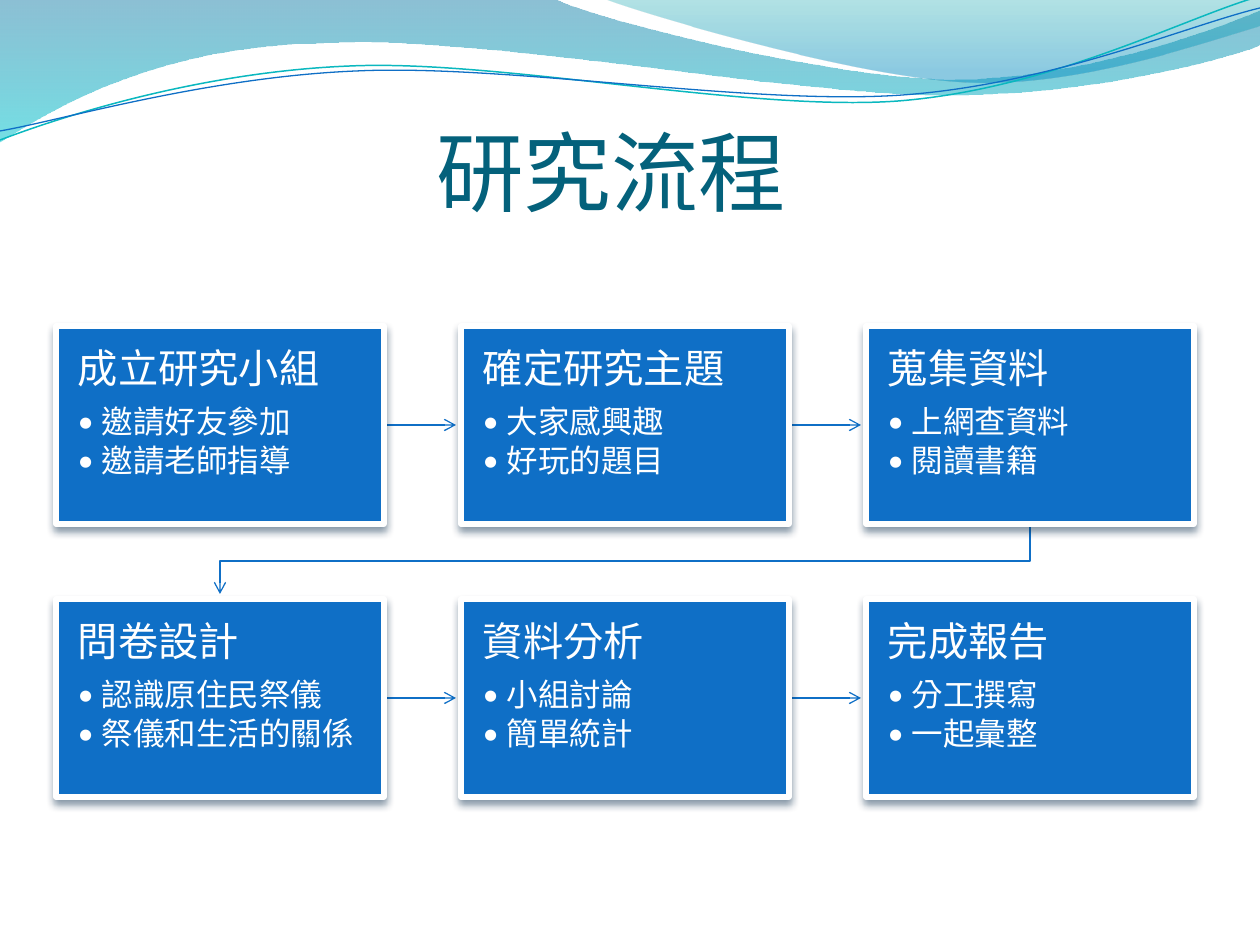
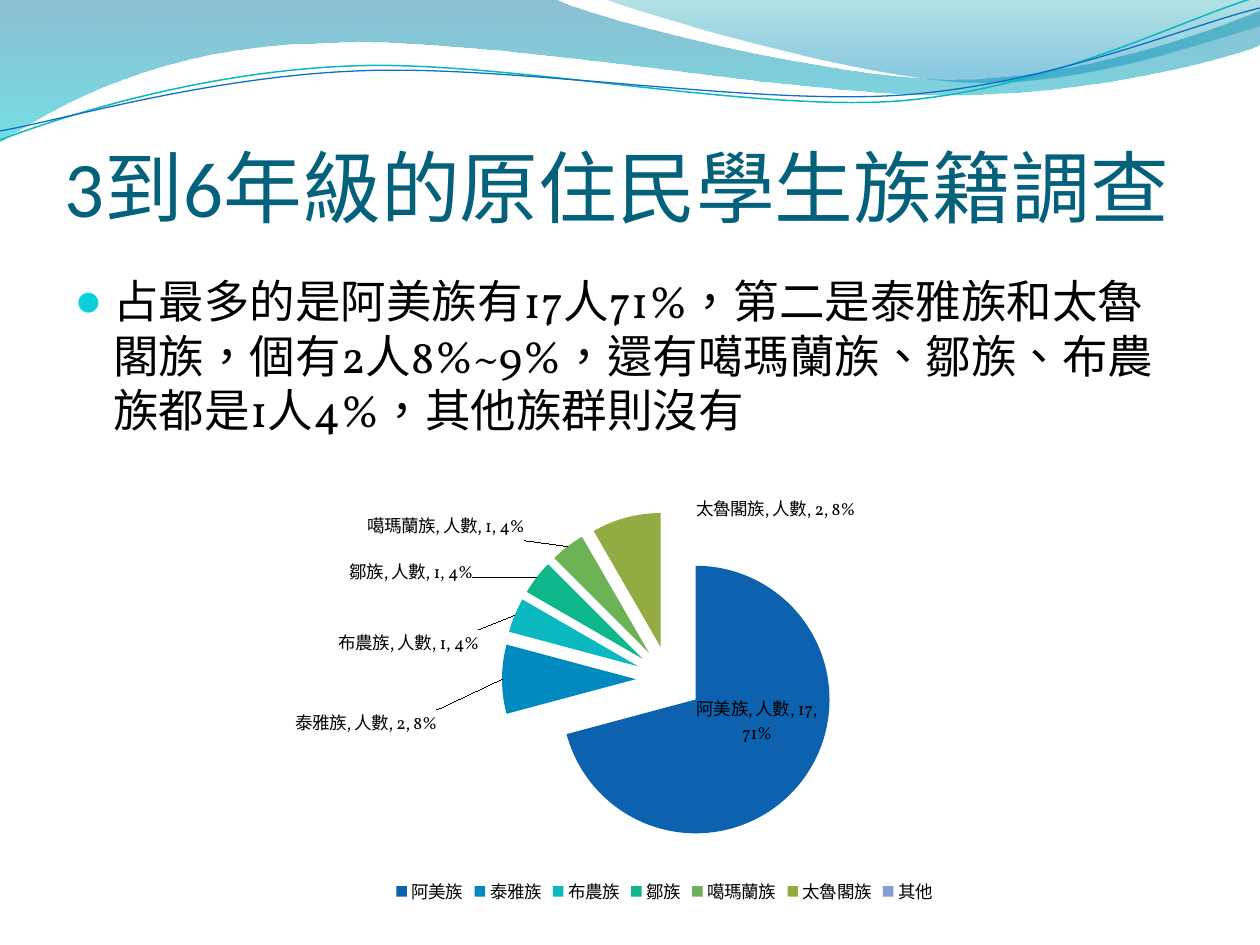
from dataclasses import dataclass

import pptx
import pptx.chart.data
import pptx.dml.color
import pptx.enum.chart
import pptx.enum.lang
import pptx.enum.shapes
import pptx.enum.text
import pptx.oxml
import pptx.oxml.ns
import pptx.util

PX = 914400 / 126  # EMU in one px


@dataclass(frozen=True)
class Theme:
    title: str = "04617B"
    blue: str = "0F6FC6"
    teal: str = "0AB8BF"
    bullet: str = "0BD0D9"
    shadow: str = "042747"
    white: str = "FFFFFF"
    black: str = "000000"
    slices: tuple = ("0C62AF", "008AC0", "0AB8C1", "0EB789",
                     "6DB356", "92AC41", "859FD5")
    title_font: str = "Calibri"
    body_font: str = "Vollkorn"
    box_heading: int = 23
    box_item: int = 18
    body: int = 26
    chart: int = 10


theme = Theme()
rgb = pptx.dml.color.RGBColor.from_string


def append_xml(parent, *fragments):
    """Append elements such as '<a:effectLst/>' to a parent element."""
    namespaces = pptx.oxml.ns.nsdecls("a", "c")
    for fragment in fragments:
        wrapper = pptx.oxml.parse_xml(f"<a:wrapper {namespaces}>{fragment}</a:wrapper>")
        parent.append(wrapper[0])


def add_paragraph(frame, text, size, color, font=theme.body_font):
    paragraph = frame.add_paragraph() if frame.text else frame.paragraphs[0]
    run = paragraph.add_run()
    run.text = text
    run.font.size = pptx.util.Pt(size)
    run.font.name = font
    run.font.color.rgb = rgb(color)
    run.font.language_id = pptx.enum.lang.MSO_LANGUAGE_ID.TRADITIONAL_CHINESE
    return paragraph


presentation = pptx.Presentation()
presentation.slide_width = round(1260 * PX)
presentation.slide_height = round(945 * PX)

# Wave header: two numbers are a line to a point, six are a cubic curve
bands = [
    ([(0, 0), (554, -1), (600, 21, 837, 79, 955, 79), (1075, 79, 1207, 33, 1260, 11),
      (1261, 45), (1239, 55, 1096, 96, 940, 95), (784, 94, 481, 35, 324, 43),
      (163, 45, 58, 105, -1, 142)],
     [(0, "0074A1", 45), (1, "00C6CF", 55)]),
    ([(604, -1), (641, 14, 859, 78, 969, 82), (1079, 87, 1211, 40, 1260, 26), (1260, 0)],
     [(0, "00A1A9", 30), (0.8, "008BBF", 45)]),
]
strands = [
    ([(0, 140), (60, 117, 199, 72, 349, 66), (498, 59, 747, 112, 898, 101),
      (1050, 89, 1182, 19, 1257, -3)], theme.teal, 0.85),
    ([(0, 131), (59, 121, 207, 77, 357, 71), (508, 64, 752, 106, 903, 95),
      (1053, 84, 1186, 26, 1260, 8)], theme.blue, 0.75),
]
waves = [(outline, stops, None, None) for outline, stops in bands]
waves += [(outline, None, color, width) for outline, color, width in strands]

titles = [
    ("研究流程 ", 50, 54, 66, pptx.enum.text.PP_ALIGN.CENTER),
    ("3到6年級的原住民學生族籍調查", 45, 65, 76, pptx.enum.text.PP_ALIGN.LEFT),
]

# Header and title of both slides
slides = []
for title, size, left, top, alignment in titles:
    slide = presentation.slides.add_slide(presentation.slide_layouts[6])
    slides.append(slide)

    for outline, stops, color, width in waves:
        points = [(round(x * PX), round(y * PX)) for segment in outline
                  for x, y in zip(segment[::2], segment[1::2])]
        builder = slide.shapes.build_freeform(*points[0])
        builder.add_line_segments(points[1:], close=stops is not None)
        wave = builder.convert_to_shape()

        # Merge the three points of each curve into one cubic segment
        outline_element = wave.element.xpath(".//a:pathLst/a:path")[0]
        lines = iter(outline_element.xpath("./a:lnTo"))
        for segment in outline[1:]:
            group = [next(lines) for _ in segment[::2]]
            if len(group) == 3:
                append_xml(outline_element, "<a:cubicBezTo/>")
                curve = outline_element[-1]
                group[0].addprevious(curve)
                for line in group:
                    curve.append(line[0])
                    outline_element.remove(line)

        wave.shadow.inherit = False
        if stops:
            wave.line.fill.background()
            wave.fill.gradient()
            wave.fill.gradient_angle = 270
            for stop, (position, stop_color, _) in zip(wave.fill.gradient_stops, stops):
                stop.position = position
                stop.color.rgb = rgb(stop_color)
            color_elements = wave.element.xpath("./p:spPr/a:gradFill//a:srgbClr")
            for element, (_, _, opacity) in zip(color_elements, stops):
                append_xml(element, f'<a:alpha val="{opacity * 1000}"/>')
        else:
            wave.fill.background()
            wave.line.color.rgb = rgb(color)
            wave.line.width = pptx.util.Pt(width)

    title_box = slide.shapes.add_textbox(
        round(left * PX), round(top * PX), round(1134 * PX), round(157 * PX))
    frame = title_box.text_frame
    frame.word_wrap = True
    frame.vertical_anchor = pptx.enum.text.MSO_ANCHOR.BOTTOM
    frame.margin_left = frame.margin_right = frame.margin_bottom = 0
    frame.margin_top = round(6 * PX)
    add_paragraph(frame, title, size, theme.title, theme.title_font).alignment = alignment

flow_slide, survey_slide = slides

# Process boxes, three to a row
steps = [
    ("成立研究小組", "邀請好友參加", "邀請老師指導"),
    ("確定研究主題", "大家感興趣", "好玩的題目"),
    ("蒐集資料", "上網查資料", "閱讀書籍"),
    ("問卷設計", "認識原住民祭儀", "祭儀和生活的關係"),
    ("資料分析", "小組討論", "簡單統計"),
    ("完成報告", "分工撰寫", "一起彙整"),
]
BOX_LEFT, BOX_TOP, BOX_WIDTH, BOX_HEIGHT = 56, 326, 328, 198
COLUMN_PITCH, ROW_PITCH = 405, 273
ARROW_GAP = 5
boxes = []
for index, (heading, *items) in enumerate(steps):
    row, column = divmod(index, 3)
    box = flow_slide.shapes.add_shape(
        pptx.enum.shapes.MSO_SHAPE.RECTANGLE,
        round((BOX_LEFT + column * COLUMN_PITCH) * PX),
        round((BOX_TOP + row * ROW_PITCH) * PX),
        round(BOX_WIDTH * PX), round(BOX_HEIGHT * PX))
    boxes.append(box)
    box.fill.solid()
    box.fill.fore_color.rgb = rgb(theme.blue)
    box.line.color.rgb = rgb(theme.white)
    box.line.width = pptx.util.Pt(3)
    box.shadow.inherit = False
    append_xml(
        box.element.xpath("./p:spPr/a:effectLst")[0],
        '<a:outerShdw blurRad="57150" dist="38100" dir="5400000" rotWithShape="0">'
        f'<a:srgbClr val="{theme.shadow}"><a:alpha val="48000"/></a:srgbClr></a:outerShdw>')

    frame = box.text_frame
    frame.word_wrap = True
    frame.vertical_anchor = pptx.enum.text.MSO_ANCHOR.TOP
    frame.margin_left = frame.margin_right = round(22 * PX)
    frame.margin_top = frame.margin_bottom = round(23 * PX)
    for text in (heading, *items):
        is_item = text != heading
        size = theme.box_item if is_item else theme.box_heading
        paragraph = add_paragraph(frame, text, size, theme.white)
        paragraph.alignment = pptx.enum.text.PP_ALIGN.LEFT
        paragraph.line_spacing = 0.9
        properties = paragraph._p.get_or_add_pPr()
        space = 15 if is_item else 35
        append_xml(properties, f'<a:spcAft><a:spcPct val="{space * 1000}"/></a:spcAft>')
        if is_item:
            paragraph.level = 1
            properties.set("marL", str(round(24 * PX)))
            properties.set("indent", str(round(-24 * PX)))
            append_xml(properties, f'<a:buFont typeface="{theme.title_font}"/>',
                       '<a:buChar char="•"/>')

# Arrows along each row, stopping just short of the next box
connector_types = pptx.enum.shapes.MSO_CONNECTOR
arrows = []
for start, end in ((0, 1), (1, 2), (3, 4), (4, 5)):
    middle = boxes[end].top + boxes[end].height // 2
    arrow = flow_slide.shapes.add_connector(
        connector_types.STRAIGHT, boxes[start].left + boxes[start].width, middle,
        boxes[end].left - round(ARROW_GAP * PX), middle)
    arrow.begin_connect(boxes[start], 3)
    arrows.append(arrow)

# Elbow to the second row: laid out sideways, then turned a quarter
center_x = BOX_LEFT + COLUMN_PITCH + BOX_WIDTH // 2
drop = ROW_PITCH - BOX_HEIGHT - ARROW_GAP
center_y = BOX_TOP + BOX_HEIGHT + drop / 2
elbow = flow_slide.shapes.add_connector(
    connector_types.ELBOW,
    round((center_x - drop / 2) * PX), round((center_y - COLUMN_PITCH) * PX),
    round((center_x + drop / 2) * PX), round((center_y + COLUMN_PITCH) * PX))
elbow.element.xpath("./p:spPr/a:xfrm")[0].set("rot", "5400000")
append_xml(elbow.element.xpath(".//a:avLst")[0], '<a:gd name="adj1" fmla="val 53000"/>')
arrows.append(elbow)

for arrow in arrows:
    arrow.line.color.rgb = rgb(theme.blue)
    arrow.line.width = pptx.util.Pt(0.75)
    append_xml(arrow.element.xpath("./p:spPr/a:ln")[0], '<a:tailEnd type="arrow"/>')
    append_xml(arrow.element.xpath("./p:spPr")[0], "<a:effectLst/>")
    boxes[0].element.addprevious(arrow.element)  # behind the boxes

# Survey findings
findings = survey_slide.shapes.add_textbox(
    round(63 * PX), round(267 * PX), round(1134 * PX), round(190 * PX))
findings.text_frame.word_wrap = True
paragraph = add_paragraph(
    findings.text_frame,
    "占最多的是阿美族有17人71%，第二是泰雅族和太魯閣族，個有2人8%~9%，"
    "還有噶瑪蘭族、鄒族、布農族都是1人4%，其他族群則沒有",
    theme.body, theme.black)
properties = paragraph._p.get_or_add_pPr()
properties.set("marL", str(round(38 * PX)))
properties.set("indent", str(round(-38 * PX)))
append_xml(
    properties,
    '<a:spcBef><a:spcPct val="20000"/></a:spcBef>',
    f'<a:buClr><a:srgbClr val="{theme.bullet}"/></a:buClr>',
    '<a:buSzPct val="95000"/>',
    f'<a:buFont typeface="{theme.title_font}"/>',
    '<a:buChar char="●"/>')

# Pie chart of the students' peoples
chart_data = pptx.chart.data.CategoryChartData()
chart_data.categories = ["阿美族", "泰雅族", "布農族", "鄒族", "噶瑪蘭族", "太魯閣族", "其他"]
chart_data.add_series("人數", [17, 2, 1, 1, 1, 2, None])
chart = survey_slide.shapes.add_chart(
    pptx.enum.chart.XL_CHART_TYPE.PIE, round(183 * PX), round(463 * PX),
    round(963 * PX), round(446 * PX), chart_data).chart
chart.has_title = False
chart.font.size = pptx.util.Pt(theme.chart)
chart.font.name = theme.body_font
chart.font.color.rgb = rgb(theme.black)
chart.has_legend = True
chart.legend.position = pptx.enum.chart.XL_LEGEND_POSITION.BOTTOM
chart.legend.include_in_layout = False

plot = chart.plots[0]
plot.vary_by_categories = True
series = plot.series[0]
holder = pptx.oxml.parse_xml(f'<c:ser {pptx.oxml.ns.nsdecls("c")}/>')
append_xml(holder, '<c:explosion val="25"/>')
series._element.xpath("./c:tx")[0].addnext(holder[0])
for index, color in enumerate(theme.slices):
    slice_fill = series.points[index].format.fill
    slice_fill.solid()
    slice_fill.fore_color.rgb = rgb(color)

labels = series.data_labels
labels.show_value = labels.show_percentage = True
labels.show_category_name = labels.show_series_name = True
labels.position = pptx.enum.chart.XL_LABEL_POSITION.BEST_FIT
separator = "<c:separator>, </c:separator>"
append_xml(holder, separator)
labels._element.xpath("./c:showLeaderLines")[0].addprevious(holder[-1])

# Labels moved off the small slices, as fractions of the chart
label_shifts = [(-0.06, 0.1), (-0.03, 0.1), (-0.06, 0.03), (-0.04, 0), (0.24, 0.03)]
flags = "".join(
    f'<c:show{name} val="{value}"/>' for name, value in
    (("LegendKey", 0), ("Val", 1), ("CatName", 1), ("SerName", 1),
     ("Percent", 1), ("BubbleSize", 0)))
for position, (x, y) in enumerate(label_shifts):
    append_xml(
        holder,
        f'<c:dLbl><c:idx val="{position + 1}"/><c:layout><c:manualLayout>'
        f'<c:x val="{x}"/><c:y val="{y}"/></c:manualLayout></c:layout>'
        f'<c:dLblPos val="bestFit"/>{flags}{separator}</c:dLbl>')
    labels._element.insert(position, holder[-1])

# Fixed place of the pie inside the chart
plot_area = chart._chartSpace.xpath("./c:chart/c:plotArea")[0]
for layout in plot_area.xpath("./c:layout"):
    plot_area.remove(layout)
append_xml(
    holder,
    '<c:layout><c:manualLayout><c:layoutTarget val="inner"/>'
    '<c:xMode val="edge"/><c:yMode val="edge"/><c:x val="0.33"/><c:y val="0.11"/>'
    '<c:w val="0.35"/><c:h val="0.75"/></c:manualLayout></c:layout>')
plot_area.insert(0, holder[-1])

presentation.save("out.pptx")
